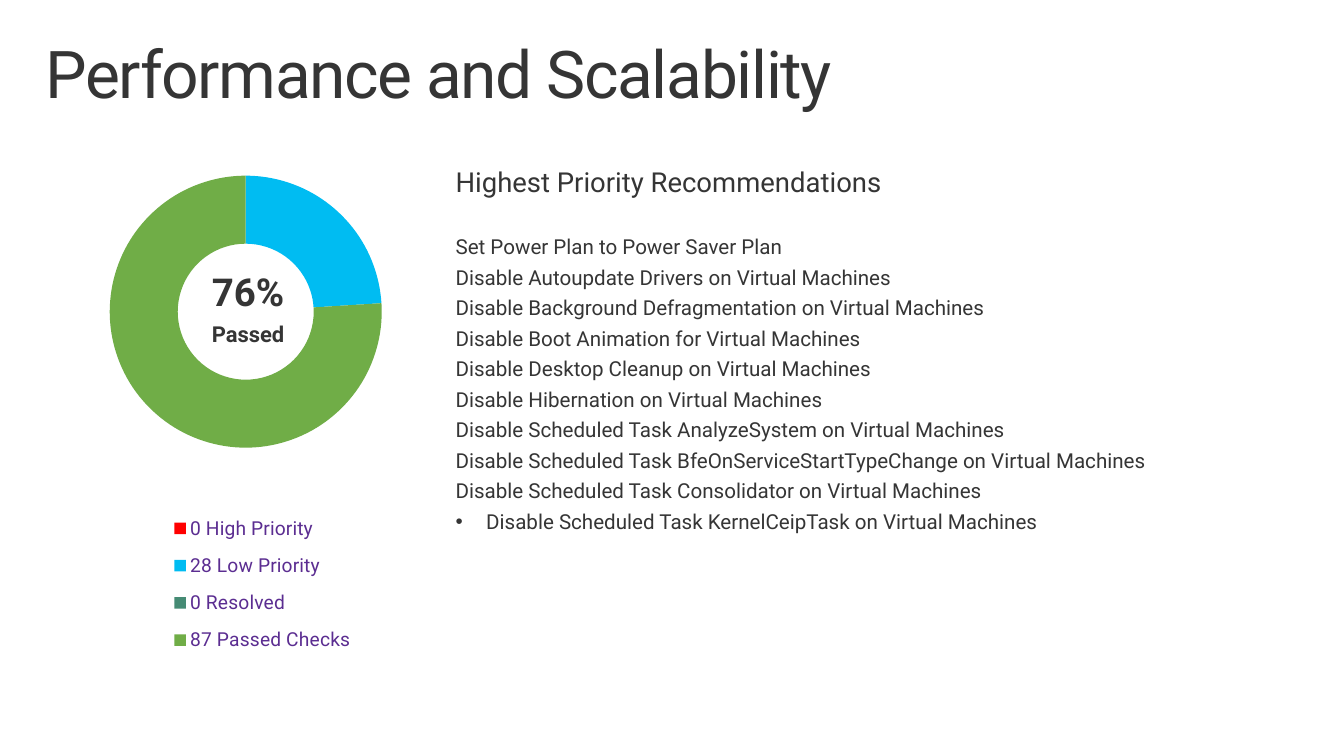
from dataclasses import dataclass, field

from lxml.etree import SubElement
from pptx import Presentation
from pptx.chart.chart import Chart
from pptx.chart.data import CategoryChartData
from pptx.dml.color import RGBColor
from pptx.enum.chart import XL_CHART_TYPE as ChartType, XL_LEGEND_POSITION as LegendPosition
from pptx.enum.text import MSO_ANCHOR as Anchor, MSO_AUTO_SIZE as AutoSize, PP_ALIGN as Align
from pptx.oxml import parse_xml
from pptx.oxml.ns import nsdecls, qn
from pptx.slide import Slide
from pptx.util import Inches, Length, Pt

WIDTH, HEIGHT = Inches(13.6), Inches(7.65)
COLUMN, ROW = WIDTH / 136, HEIGHT / 153
FONT, INK, LEGEND_INK = "Roboto", "353535", "5B2D91"


@dataclass
class Line:
    text: str
    size: float
    bold: bool = False
    align: Align = Align.LEFT
    space_after: float = 6
    tracking: int = 0
    bullet: bool = False


@dataclass
class TextBlock:
    column: float
    row: float
    columns: float
    rows: float
    lines: list[Line]
    inset: tuple[float, float] = (0.2, 0.16)
    grow: bool = True


@dataclass
class Slice:
    label: str
    share: int | None
    color: str


@dataclass
class Doughnut:
    column: float
    row: float
    columns: float
    rows: float
    plot: tuple[float, float, float, float]
    legend: tuple[float, float, float, float]
    slices: list[Slice] = field(default_factory=list)


RECOMMENDATIONS = [
    "Set Power Plan to Power Saver Plan",
    "Disable Autoupdate Drivers on Virtual Machines",
    "Disable Background Defragmentation on Virtual Machines",
    "Disable Boot Animation for Virtual Machines",
    "Disable Desktop Cleanup on Virtual Machines",
    "Disable Hibernation on Virtual Machines",
    "Disable Scheduled Task AnalyzeSystem on Virtual Machines",
    "Disable Scheduled Task BfeOnServiceStartTypeChange on Virtual Machines",
    "Disable Scheduled Task Consolidator on Virtual Machines",
    "Disable Scheduled Task KernelCeipTask on Virtual Machines",
]
LAST = RECOMMENDATIONS[-1]

TITLE = TextBlock(3, 6.4, 130, 20,
                  [Line("Performance and Scalability", 48, space_after=0, tracking=-100)],
                  inset=(0.16, 0.1), grow=False)
SCORE = TextBlock(18, 52.2, 14.2, 63.8,
                  [Line("76%", 28, True, Align.CENTER), Line("Passed", 16, True, Align.CENTER)])
ADVICE = TextBlock(44.1, 31, 84.1, 82,
                   [Line("Highest Priority Recommendations", 20, space_after=28)]
                   + [Line(text, 15, bullet=text == LAST) for text in RECOMMENDATIONS])
CHECKS = Doughnut(0, 22, 48.3, 117.4, (0.23, 0.07, 0.57, 0.56), (0.35, 0.68, 0.4, 0.28), [
    Slice("0 High Priority", 0, "FF0000"),
    Slice("", None, "001D49"),
    Slice("28 Low Priority", 24, "00BCF2"),
    Slice("", None, "A3008F"),
    Slice("0 Resolved", 0, "458B74"),
    Slice("", None, "D1D1D1"),
    Slice("87 Passed Checks", 76, "70AD47"),
])


def color(value: str) -> RGBColor:
    return RGBColor.from_string(value)


def apply(target: object, values: dict) -> None:
    for name, value in values.items():
        setattr(target, name, value)


def place(block: TextBlock | Doughnut) -> tuple[Length, ...]:
    return tuple(Length(round(value)) for value in (
        block.column * COLUMN, block.row * ROW, block.columns * COLUMN, block.rows * ROW))


def style_font(font: object, size: float, ink: str, bold: bool = False) -> None:
    apply(font, {"name": FONT, "size": Pt(size), "bold": bold})
    font.color.rgb = color(ink)


def add_text(slide: Slide, block: TextBlock) -> None:
    frame = slide.shapes.add_textbox(*place(block)).text_frame
    across, down = map(Inches, block.inset)
    apply(frame, {
        "word_wrap": True, "vertical_anchor": Anchor.TOP,
        "auto_size": AutoSize.SHAPE_TO_FIT_TEXT if block.grow else AutoSize.NONE,
        "margin_left": across, "margin_right": across,
        "margin_top": down, "margin_bottom": down,
    })
    for index, line in enumerate(block.lines):
        paragraph = frame.add_paragraph() if index else frame.paragraphs[0]
        apply(paragraph, {"alignment": line.align, "line_spacing": 0.9,
                          "space_after": Pt(line.space_after)})
        run = paragraph.add_run()
        run.text = line.text
        style_font(run.font, line.size, INK, line.bold)
        if line.tracking:
            run.font._element.set("spc", str(line.tracking))
        if line.bullet:
            properties = paragraph._p.get_or_add_pPr()
            indent = Inches(0.31)
            properties.set("marL", str(indent))
            properties.set("indent", str(-indent))
            SubElement(properties, qn("a:buFont")).set("typeface", "Arial")
            SubElement(properties, qn("a:buChar")).set("char", "•")


def set_layout(parent: object, index: int, box: tuple[float, ...], inner: bool = False) -> None:
    for old in parent.findall(qn("c:layout")):
        parent.remove(old)
    settings = [("layoutTarget", "inner")] if inner else []
    settings += [("xMode", "edge"), ("yMode", "edge"), *zip("xywh", box)]
    items = "".join(f'<c:{name} val="{value}"/>' for name, value in settings)
    parent.insert(index, parse_xml(
        f'<c:layout {nsdecls("c")}><c:manualLayout>{items}</c:manualLayout></c:layout>'))


def add_legend(chart: Chart, doughnut: Doughnut) -> None:
    chart.has_legend = True
    legend = chart.legend
    apply(legend, {"position": LegendPosition.BOTTOM, "include_in_layout": False})
    style_font(legend.font, 14, LEGEND_INK)
    unlabeled = [index for index, part in enumerate(doughnut.slices) if not part.label]
    set_layout(legend._element, 1, doughnut.legend)
    for position, index in enumerate(unlabeled, 1):
        legend._element.insert(position, parse_xml(
            f'<c:legendEntry {nsdecls("c")}><c:idx val="{index}"/>'
            '<c:delete val="1"/></c:legendEntry>'))


def add_doughnut(slide: Slide, doughnut: Doughnut) -> None:
    data = CategoryChartData()
    data.categories = [part.label for part in doughnut.slices]
    data.add_series("Series 1", [part.share for part in doughnut.slices])
    chart = slide.shapes.add_chart(ChartType.DOUGHNUT, *place(doughnut), data).chart
    chart.has_title = False
    style_font(chart.font, 10, INK)
    plot = chart.plots[0]
    plot.vary_by_categories = True
    for index, part in enumerate(doughnut.slices):
        point = plot.series[0].points[index].format
        point.fill.solid()
        point.fill.fore_color.rgb = color(part.color)
        point.line.fill.background()
    plot._element.find(qn("c:holeSize")).set("val", "68")
    set_layout(plot._element.getparent(), 0, doughnut.plot, inner=True)
    add_legend(chart, doughnut)


def main() -> None:
    """Build the performance and scalability slide."""
    presentation = Presentation()
    apply(presentation, {"slide_width": WIDTH, "slide_height": HEIGHT})
    slide = presentation.slides.add_slide(presentation.slide_layouts[6])
    add_text(slide, TITLE)
    add_doughnut(slide, CHECKS)
    for block in (SCORE, ADVICE):
        add_text(slide, block)
    presentation.save("out.pptx")


if __name__ == "__main__":
    main()
